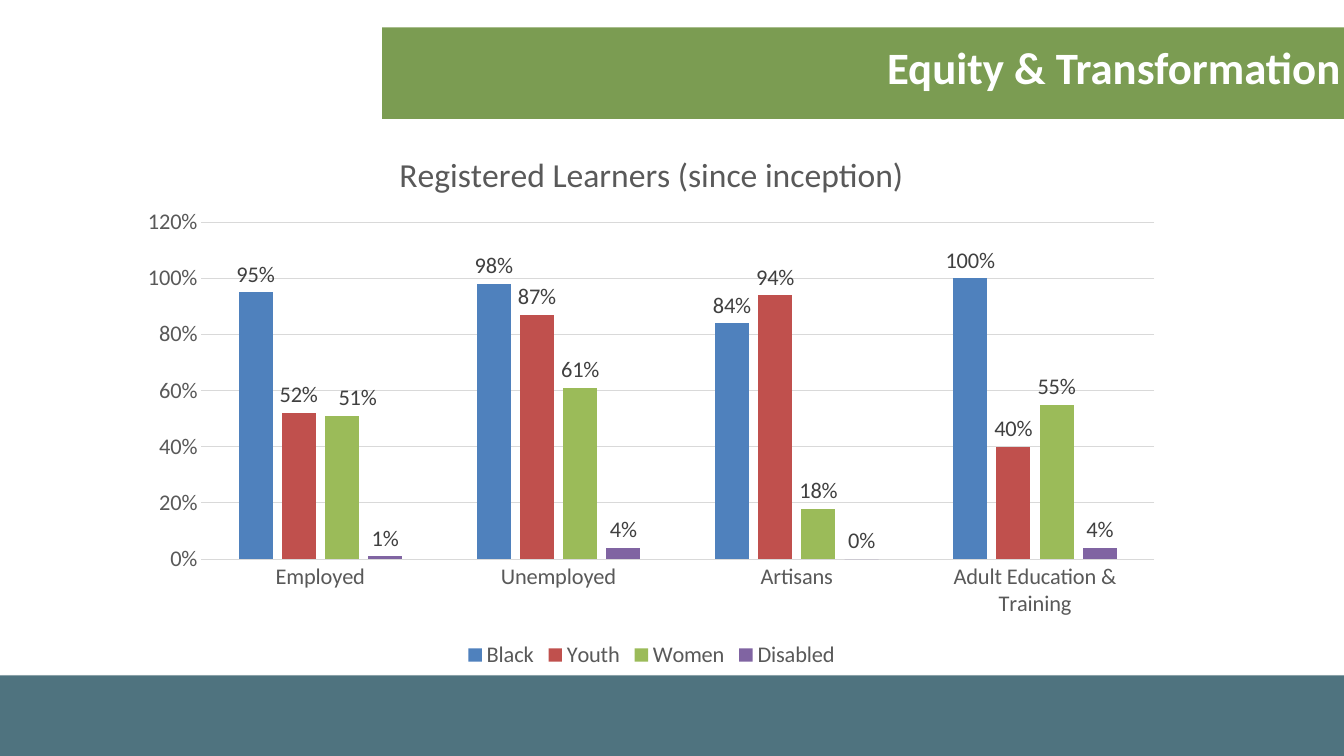
from lxml import etree
from pptx import Presentation
from pptx import util as u
from pptx.chart import data as chart_data
from pptx.dml.color import RGBColor
from pptx.enum import chart as ce
from pptx.enum import shapes, text
from pptx.oxml import parse_xml
from pptx.oxml.ns import nsdecls, qn

FONT = "Calibri"
WIDTH, HEIGHT = 960, 540
GREY, LABEL, RULE = "595959", "404040", "D9D9D9"
CATEGORIES = ["Employed", "Unemployed", "Artisans", "Adult Education & Training"]
LEARNERS = [
    ("Black", "4F81BD", (0.95, 0.98, 0.84, 1)),
    ("Youth", "C0504D", (0.52, 0.87, 0.94, 0.4)),
    ("Women", "9BBB59", (0.51, 0.61, 0.18, 0.55)),
    ("Disabled", "8064A2", (0.01, 0.04, 0, 0.04)),
]


def colour(value):
    return RGBColor.from_string(value)


def apply(target, **values):
    for name, value in values.items():
        setattr(target, name, value)


def style(font, size, value, bold=False):
    apply(font, name=FONT, size=u.Pt(size), bold=bold)
    font.color.rgb = colour(value)


def add_block(page, box, fill):
    block = page.shapes.add_shape(shapes.MSO_SHAPE.RECTANGLE, *map(u.Pt, box))
    block.shadow.inherit = False
    block.fill.solid()
    block.fill.fore_color.rgb = colour(fill)
    block.line.fill.background()
    return block


def add_footer(page, box):
    band = add_block(page, box, "4F737F")
    # Soft shadow below the band
    effects = band.element.spPr.find(qn("a:effectLst"))
    effects.append(parse_xml(
        f'<a:outerShdw {nsdecls("a")} blurRad="{u.Pt(3.1)}" dist="{u.Pt(1.8)}" '
        'dir="5400000" rotWithShape="0"><a:srgbClr val="000000">'
        '<a:alpha val="35000"/></a:srgbClr></a:outerShdw>'))


def add_banner(page, box):
    left, top, width, height = box
    add_block(page, box, "7B9C52")
    # Title, brought in front of the banner
    title = page.shapes.title
    page.shapes.element.append(title.element)
    apply(title, left=u.Pt(left + 353.5), top=u.Pt(top + 5.5),
          width=u.Pt(345.6), height=u.Pt(46))
    frame = title.text_frame
    apply(frame, text="Equity & Transformation", word_wrap=False,
          auto_size=text.MSO_AUTO_SIZE.NONE,
          vertical_anchor=text.MSO_ANCHOR.TOP)
    para = frame.paragraphs[0]
    para.alignment = text.PP_ALIGN.LEFT
    style(para.runs[0].font, 32, "FFFFFF", True)


def set_layout(parent, index, **values):
    """Give a chart part a manual layout, as fractions of the chart."""
    for old in parent.findall(qn("c:layout")):
        parent.remove(old)
    layout = parse_xml(f'<c:layout {nsdecls("c")}><c:manualLayout/></c:layout>')
    for name, value in values.items():
        etree.SubElement(layout[0], qn(f"c:{name}")).set("val", str(value))
    parent.insert(index, layout)


def format_axes(chart):
    for axis in (chart.category_axis, chart.value_axis):
        apply(axis, major_tick_mark=ce.XL_TICK_MARK.NONE,
              minor_tick_mark=ce.XL_TICK_MARK.NONE)
        style(axis.tick_labels.font, 16, GREY)
    values = chart.value_axis
    apply(values, minimum_scale=0, maximum_scale=1.2, major_unit=0.2,
          has_major_gridlines=True)
    apply(values.tick_labels, number_format="0%", number_format_is_linked=False)
    values.format.line.fill.background()
    for line in (chart.category_axis.format.line, values.major_gridlines.format.line):
        line.color.rgb = colour(RULE)
        line.width = u.Pt(0.75)


def format_series(chart):
    for series, (_, fill, _) in zip(chart.plots[0].series, LEARNERS):
        series.format.fill.solid()
        series.format.fill.fore_color.rgb = colour(fill)
        series.invert_if_negative = False
        labels = series.data_labels
        apply(labels, show_value=True, number_format="0%",
              number_format_is_linked=False,
              position=ce.XL_LABEL_POSITION.OUTSIDE_END)
        style(labels.font, 16, LABEL)


def add_learner_chart(page, box):
    data = chart_data.CategoryChartData(number_format="0%")
    data.categories = CATEGORIES
    for name, _, values in LEARNERS:
        data.add_series(name, values)
    chart = page.shapes.add_chart(
        ce.XL_CHART_TYPE.COLUMN_CLUSTERED, *map(u.Pt, box), data).chart
    style(chart.font, 16, "000000")
    apply(chart.plots[0], gap_width=219, overlap=-27, vary_by_categories=False)

    # Title and legend
    chart.has_title = True
    heading = chart.chart_title.text_frame
    heading.text = "Registered Learners (since inception)"
    style(heading.paragraphs[0].runs[0].font, 24, GREY)
    chart.has_legend = True
    apply(chart.legend, position=ce.XL_LEGEND_POSITION.BOTTOM, include_in_layout=False)
    style(chart.legend.font, 16, GREY)

    format_axes(chart)
    format_series(chart)

    # Move the first label for women clear of its neighbour
    label = chart.plots[0].series[2].points[0].data_label
    label.position = ce.XL_LABEL_POSITION.OUTSIDE_END
    style(label.font, 16, LABEL)
    set_layout(chart.element.xpath(".//c:dLbl")[0], 1, x=0.015, y=0)
    set_layout(chart.element.xpath(".//c:plotArea")[0], 0, layoutTarget="inner",
               xMode="edge", yMode="edge", x=0.07, y=0.17, w=0.91, h=0.62)


def main():
    deck = Presentation()
    apply(deck, slide_width=u.Pt(WIDTH), slide_height=u.Pt(HEIGHT))
    page = deck.slides.add_slide(deck.slide_layouts[5])
    add_footer(page, (0, 482.4, WIDTH, 57.6))
    add_banner(page, (272.9, 19.5, 688, 65.5))
    add_learner_chart(page, (91.4, 92.9, 748, 388))
    deck.save("out.pptx")


if __name__ == "__main__":
    main()
